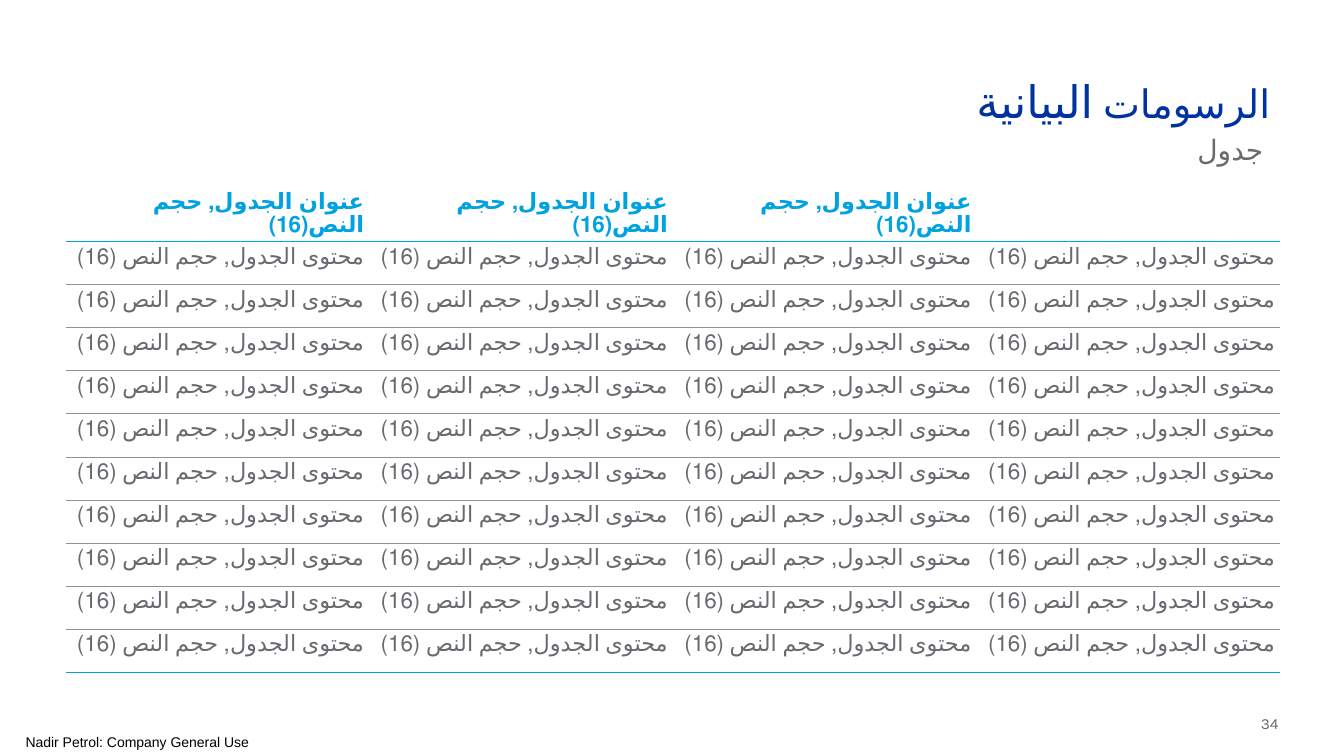
from lxml import etree
from pptx import Presentation
from pptx.dml.color import RGBColor
from pptx.enum.text import MSO_ANCHOR, MSO_AUTO_SIZE, PP_ALIGN
from pptx.oxml.ns import qn
from pptx.util import Inches, Pt

TOP, MIDDLE, BOTTOM = MSO_ANCHOR.TOP, MSO_ANCHOR.MIDDLE, MSO_ANCHOR.BOTTOM
RIGHT, CENTER = PP_ALIGN.RIGHT, PP_ALIGN.CENTER
NO_FIT = MSO_AUTO_SIZE.NONE

NAVY = RGBColor(0x00, 0x33, 0xA0)
CYAN = RGBColor(0x00, 0xA3, 0xE0)
GREY = RGBColor(0x67, 0x6A, 0x6E)
RULE = RGBColor(0x8F, 0x91, 0x94)
BLACK = RGBColor(0x00, 0x00, 0x00)

NO_STYLE = "{2D5ABB26-0587-4C30-8999-92F81FD0307C}"
HEADING = "عنوان الجدول, حجم النص(16)"
CONTENT = "محتوى الجدول, حجم النص (16)"
HEADINGS = [HEADING] * 3 + [""]
ROWS = [[CONTENT] * 4] * 10


def set_paragraph(p, runs, color, align=RIGHT, font="Arial", bold=False, rtl=True):
    """Fill a paragraph with (text, size) runs."""
    p.alignment = align
    if rtl:
        p._p.get_or_add_pPr().set("rtl", "1")
    for text, size in runs:
        r = p.add_run()
        r.text = text
        for name, value in {"name": font, "size": Pt(size), "bold": bold}.items():
            setattr(r.font, name, value)
        r.font.color.rgb = color
        if rtl:
            r._r.get_or_add_rPr().set("lang", "ar-SA")


def set_frame(s, box, side, anchor):
    """Place a shape and set its text frame."""
    s.left, s.top, s.width, s.height = (Inches(v) for v in box)
    tf = s.text_frame
    settings = {
        "auto_size": NO_FIT, "word_wrap": True, "vertical_anchor": anchor,
        "margin_left": Inches(side), "margin_right": Inches(side),
        "margin_top": Inches(0.05), "margin_bottom": Inches(0.05),
    }
    for name, value in settings.items():
        setattr(tf, name, value)
    return tf.paragraphs[0]


def add_headings(slide, left, top, width):
    """Title with the subtitle below it."""
    title, subtitle = slide.placeholders
    p = set_frame(title, (left, top, width, 0.57), 0.1, TOP)
    set_paragraph(p, [("الرسومات ", 28), ("البيانية", 32)], NAVY)
    q = set_frame(subtitle, (left - 0.17, top + 0.58, width, 0.57), 0, TOP)
    set_paragraph(q, [("جدول", 20)], GREY)
    for par in (p, q):
        par.space_before = Pt(6)
        par.line_spacing = 1.0


def set_border(cell, side, color):
    ln = etree.SubElement(cell._tc.get_or_add_tcPr(), qn("a:" + side), w=str(Pt(0.75)))
    fill = etree.SubElement(ln, qn("a:solidFill"))
    etree.SubElement(fill, qn("a:srgbClr"), val=str(color))


def add_table(slide, left, top, width):
    """Ruled table: cyan below the header and the last row, grey between."""
    grid = [HEADINGS] + ROWS
    last = len(grid) - 1
    frame = slide.shapes.add_table(
        len(grid), len(HEADINGS), Inches(left), Inches(top), Inches(width), Inches(4.89))
    table = frame.table
    table.first_row = table.horz_banding = False
    table._tbl.tblPr.find(qn("a:tableStyleId")).text = NO_STYLE
    for column in table.columns:
        column.width = Inches(width / len(HEADINGS))

    for i, texts in enumerate(grid):
        header = i == 0
        table.rows[i].height = Inches(0.62 if header else 0.427)
        for j, text in enumerate(texts):
            cell = table.cell(i, j)
            cell.margin_left = Inches(0.05 if header or j else 0)
            cell.margin_right = cell.margin_top = cell.margin_bottom = Inches(0.05)
            cell.vertical_anchor = BOTTOM if header else TOP
            if text:
                set_paragraph(cell.text_frame.paragraphs[0], [(text, 16)],
                              CYAN if header else GREY, bold=header)
            if not header:
                set_border(cell, "lnT", CYAN if i == 1 else RULE)
            set_border(cell, "lnB", CYAN if i in (0, last) else RULE)
            cell.fill.background()


def add_footer(slide):
    """Slide number and classification label."""
    number = slide.shapes.add_textbox(0, 0, 0, 0)
    p = set_frame(number, (12.29, 7.05, 0.39, 0.25), 0, MIDDLE)
    set_paragraph(p, [("34", 11)], GREY, font="Karla", rtl=False)
    label = slide.shapes.add_textbox(0, 0, 0, 0)
    p = set_frame(label, (0, 7.23, 2.72, 0.27), 0, MIDDLE)
    set_paragraph(p, [("Nadir Petrol: Company General Use", 10)], BLACK,
                  align=CENTER, rtl=False)


def main():
    prs = Presentation()
    prs.slide_width, prs.slide_height = Inches(13.33), Inches(7.5)
    slide = prs.slides.add_slide(prs.slide_layouts[0])
    add_footer(slide)
    add_table(slide, 0.65, 1.78, 12.05)
    add_headings(slide, 7.75, 0.68, 4.95)
    prs.save("out.pptx")


if __name__ == "__main__":
    main()
